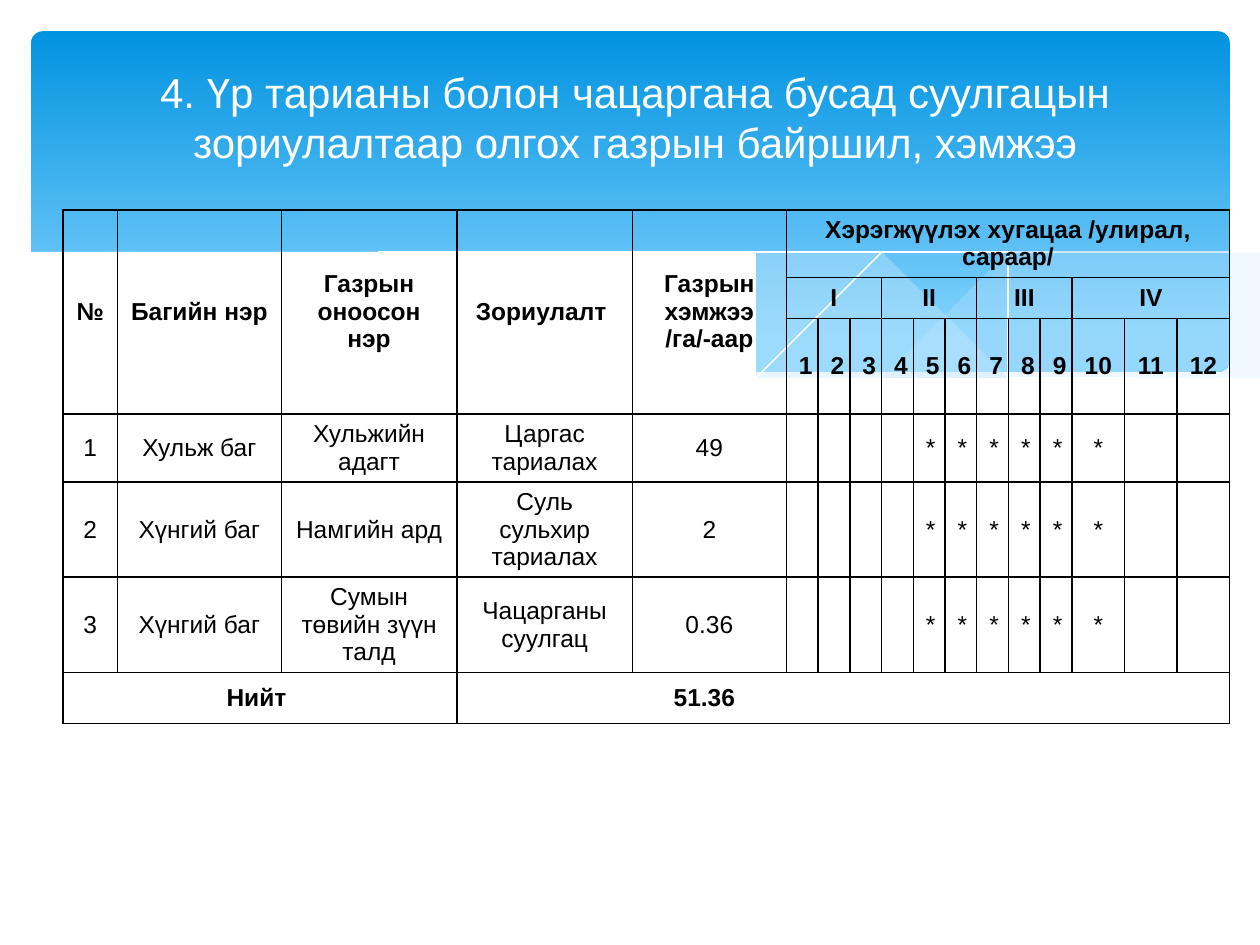
from lxml.etree import SubElement
from pptx import Presentation
from pptx.dml.color import RGBColor
from pptx.enum.shapes import MSO_SHAPE as Shape
from pptx.enum.text import MSO_ANCHOR as Anchor, PP_ALIGN as Align
from pptx.oxml.ns import qn
from pptx.util import Cm, Pt

WHITE = RGBColor(0xFF, 0xFF, 0xFF)
BLACK = RGBColor(0, 0, 0)
SKY = RGBColor(0x02, 0x93, 0xE0)
LIGHT_SKY = RGBColor(0x83, 0xD3, 0xFE)
MIST = RGBColor(0xC6, 0xE7, 0xFC)

RIGHT_RIPPLE = [
    (9.76, 2), (9.48, 2.04), (9.21, 2.1), (8.91, 2.16), (8.61, 2.23), (8.05, 2.37),
    (7.53, 2.48), (7.06, 2.57), (6.61, 2.65), (6.91, 2.69), (7.19, 2.72), (7.45, 2.75),
    (7.69, 2.77), (8.03, 2.78), (8.35, 2.77), (8.63, 2.75), (8.89, 2.72), (9.13, 2.67),
    (9.35, 2.62), (9.49, 2.57), (9.63, 2.52), (9.76, 2.47),
]
LONG_RIPPLE = [
    (8.93, 2.73), (8.66, 2.69), (8.37, 2.65), (8.07, 2.6), (7.75, 2.54), (7.41, 2.47),
    (7.06, 2.4), (6.68, 2.31), (6.29, 2.22), (5.98, 2.14), (5.69, 2.08), (5.41, 2.03),
    (5.14, 1.98), (4.89, 1.94), (4.65, 1.91), (4.42, 1.89), (4.2, 1.87), (3.99, 1.86),
    (3.8, 1.85), (3.61, 1.85), (3.28, 1.87), (2.99, 1.89), (2.86, 1.91), (3.23, 1.96),
    (3.62, 2.03), (4.04, 2.11), (4.49, 2.22), (4.91, 2.32), (5.3, 2.4), (5.66, 2.48),
    (6.01, 2.55), (6.34, 2.61), (6.65, 2.66), (6.95, 2.7), (7.22, 2.74), (7.48, 2.76),
    (7.73, 2.77), (7.96, 2.78), (8.28, 2.78), (8.57, 2.77), (8.76, 2.75),
]
FALLING_LINE = [
    (3.09, 1.95), (3.28, 1.92), (3.53, 1.89), (3.87, 1.87), (4.33, 1.87), (4.69, 1.89),
    (5.1, 1.92), (5.56, 1.97), (6.08, 2.04), (6.65, 2.13), (6.95, 2.19), (7.27, 2.26),
    (7.6, 2.33), (7.95, 2.41), (8.31, 2.51), (8.69, 2.61), (9.07, 2.72),
]
RISING_LINE = [
    (6.13, 2.57), (6.53, 2.46), (6.95, 2.35), (7.48, 2.23), (8.06, 2.1), (8.66, 1.99),
    (8.95, 1.94), (9.24, 1.9), (9.51, 1.87), (9.75, 1.85),
]
WHITE_WAVE = [
    (9.77, 2.46), (9.59, 2.53), (9.4, 2.59), (9.2, 2.65), (8.99, 2.69), (8.75, 2.73),
    (8.5, 2.75), (8.23, 2.77), (7.93, 2.76), (7.61, 2.75), (7.26, 2.72), (6.88, 2.68),
    (6.48, 2.62), (6.03, 2.54), (5.55, 2.45), (5.03, 2.33), (4.47, 2.2), (4.18, 2.13),
    (3.91, 2.07), (3.65, 2.02), (3.4, 1.97), (3.16, 1.94), (2.92, 1.9), (2.71, 1.88),
    (2.5, 1.86), (2.3, 1.85), (2.11, 1.84), (1.77, 1.84), (1.46, 1.85), (1.19, 1.87),
    (0.95, 1.91), (0.76, 1.95), (0.59, 1.99), (0.46, 2.03), (0.36, 2.07), (0.23, 2.13),
    (0.23, 3.29), (9.77, 3.29),
]

TITLE = "4. Үр тарианы болон чацаргана бусад суулгацын зориулалтаар олгох газрын байршил, хэмжээ"
COLUMN_WIDTHS = [1.1, 3.3, 3.54, 3.54, 3.1] + [0.64] * 9 + [1.06] * 3
ROW_HEIGHTS = [1.36, 0.83, 1.92, 1.37, 1.92, 1.92, 1.03]
HEADINGS = ["№", "Багийн нэр", "Газрын оноосон нэр", "Зориулалт ", "Газрын хэмжээ /га/-аар"]
PERIOD = "Хэрэгжүүлэх хугацаа /улирал, сараар/"
QUARTERS = ["I", "II", "III", "IV"]
PLOTS = [
    ["1", "Хульж баг", "Хульжийн адагт", "Царгас тариалах", "49"],
    ["2", "Хүнгий баг", "Намгийн ард", "Суль сульхир тариалах", "2"],
    ["3", "Хүнгий баг", "Сумын төвийн зүүн талд", "Чацарганы суулгац", "0.36"],
]
ACTIVE_MONTHS = range(5, 11)
FIRST_MONTH = len(HEADINGS)
HEADER_ROWS = 3


class SlideBuilder:
    font_name = "Arial"
    table_size = Pt(14)
    title_size = Pt(24)

    def __init__(self, presentation):
        self.slide = presentation.slides.add_slide(presentation.slide_layouts[6])
        self.shapes = self.slide.shapes

    def add_text(self, paragraph, text, size, color, bold=False, align=Align.CENTER):
        paragraph.alignment = align
        run = paragraph.add_run()
        run.text = text
        run.font.name = self.font_name
        run.font.size = size
        run.font.bold = bold
        run.font.color.rgb = color

    def banner(self, left, top, width, height):
        shape = self.shapes.add_shape(Shape.ROUNDED_RECTANGLE, Cm(left), Cm(top), Cm(width), Cm(height))
        shape.adjustments[0] = 0.034
        shape.shadow.inherit = False
        shape.line.fill.background()
        shape.fill.gradient()
        shape.fill.gradient_angle = 270
        for stop, color, position in zip(shape.fill.gradient_stops, (SKY, LIGHT_SKY), (0, 0.9)):
            stop.color.rgb = color
            stop.position = position

    def outline(self, points, close):
        builder = self.shapes.build_freeform(*points[0], scale=Cm(2.54))
        builder.add_line_segments(points[1:], close=close)
        shape = builder.convert_to_shape()
        shape.shadow.inherit = False
        return shape

    def wave(self, points, color, opacity=100):
        shape = self.outline(points, True)
        shape.line.fill.background()
        shape.fill.solid()
        shape.fill.fore_color.rgb = color
        if opacity < 100:
            color_element = shape._element.spPr.find(qn("a:solidFill"))[0]
            SubElement(color_element, qn("a:alpha"), val=str(opacity * 1000))

    def curve(self, points):
        shape = self.outline(points, False)
        shape.fill.background()
        shape.line.color.rgb = WHITE
        shape.line.width = Pt(0)

    def title(self, text, left, top, width, height):
        frame = self.shapes.add_textbox(Cm(left), Cm(top), Cm(width), Cm(height)).text_frame
        frame.word_wrap = True
        frame.vertical_anchor = Anchor.MIDDLE
        self.add_text(frame.paragraphs[0], text, self.title_size, WHITE)

    def style_cell(self, cell):
        properties = cell._tc.get_or_add_tcPr()
        for side in ("lnL", "lnR", "lnT", "lnB"):
            border = SubElement(properties, qn(f"a:{side}"), w=str(Pt(1)))
            fill = SubElement(border, qn("a:solidFill"))
            SubElement(fill, qn("a:srgbClr"), val=str(BLACK))
        cell.fill.background()
        cell.vertical_anchor = Anchor.MIDDLE
        paragraph = cell.text_frame.paragraphs[0]
        SubElement(paragraph._p, qn("a:endParaRPr"), sz=str(int(self.table_size.pt * 100)))

    def table(self, left, top, widths, heights):
        table = self.shapes.add_table(
            len(heights), len(widths), Cm(left), Cm(top), Cm(sum(widths)), Cm(sum(heights))
        ).table
        table.first_row = table.horz_banding = False
        for column, width in zip(table.columns, widths):
            column.width = Cm(width)
        for row, height in zip(table.rows, heights):
            row.height = Cm(height)
        for cell in table.iter_cells():
            self.style_cell(cell)
        return table

    def fill_cell(self, table, row, column, text, rows=1, columns=1, bold=True, align=Align.CENTER):
        cell = table.cell(row, column)
        if rows * columns > 1:
            cell.merge(table.cell(row + rows - 1, column + columns - 1))
        self.add_text(cell.text_frame.paragraphs[0], text, self.table_size, BLACK, bold, align)
        return cell


def fill_land_table(builder, table):
    for column, heading in enumerate(HEADINGS):
        builder.fill_cell(table, 0, column, heading, rows=HEADER_ROWS)
    builder.fill_cell(table, 0, FIRST_MONTH, PERIOD, columns=12)
    for index, quarter in enumerate(QUARTERS):
        builder.fill_cell(table, 1, FIRST_MONTH + 3 * index, quarter, columns=3)
    for month in range(1, 13):
        builder.fill_cell(table, 2, FIRST_MONTH + month - 1, str(month))
    for row, plot in enumerate(PLOTS, HEADER_ROWS):
        for column, text in enumerate(plot):
            builder.fill_cell(table, row, column, text, bold=False)
        for month in ACTIVE_MONTHS:
            builder.fill_cell(table, row, FIRST_MONTH + month - 1, "*", bold=False)
    total_row = HEADER_ROWS + len(PLOTS)
    builder.fill_cell(table, total_row, 0, "Нийт ", columns=3)
    total = builder.fill_cell(table, total_row, 3, "51.36", columns=14, align=Align.LEFT)
    total.margin_left = Cm(4.37)


def main():
    presentation = Presentation()
    presentation.slide_width = Cm(25.4)
    presentation.slide_height = Cm(19.05)
    builder = SlideBuilder(presentation)
    builder.banner(0.63, 0.63, 24.16, 6.86)
    builder.wave(RIGHT_RIPPLE, MIST, 29)
    builder.wave(LONG_RIPPLE, MIST, 40)
    builder.curve(FALLING_LINE)
    builder.curve(RISING_LINE)
    builder.wave(WHITE_WAVE, WHITE)
    table = builder.table(1.27, 4.23, COLUMN_WIDTHS, ROW_HEIGHTS)
    fill_land_table(builder, table)
    builder.title(TITLE, 0.84, 0.76, 23.93, 3.18)
    presentation.save("out.pptx")


if __name__ == "__main__":
    main()
